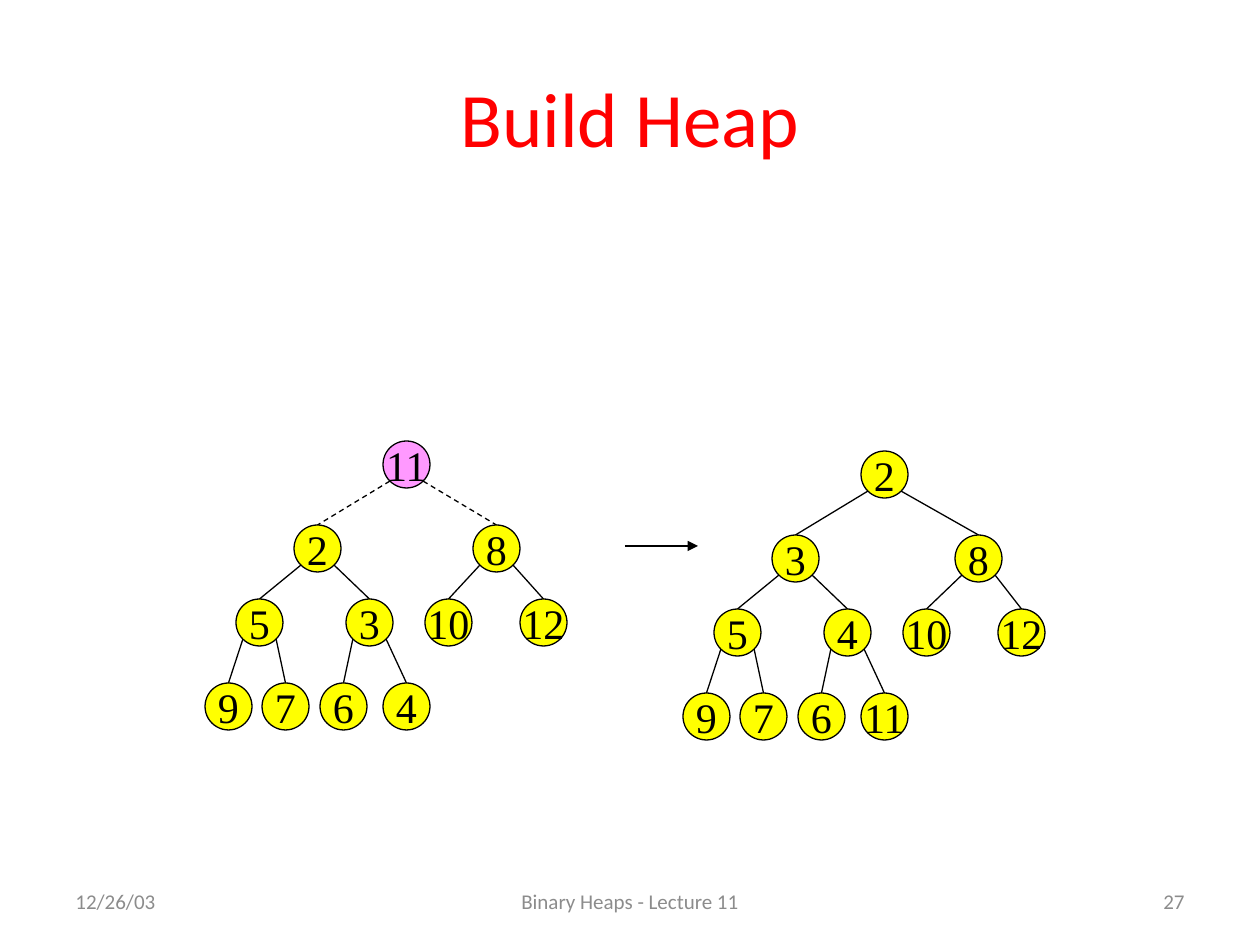
from math import sqrt

from pptx import Presentation
from pptx import util as u
from pptx.dml.color import RGBColor
from pptx.enum import dml, shapes, text
from pptx.oxml import parse_xml
from pptx.oxml.ns import nsdecls

PX = 914400 / 126
NODE = 47


def px(length):
    return u.Emu(round(length * PX))


def colour(value):
    return RGBColor.from_string(value)


class HeapSlide:
    """Style and current slide, with one method for each kind of element."""

    LABEL = dict(size=24, face="Times New Roman", ink="000000")
    FOOTER = dict(size=12, face="Calibri", ink="8C8C8C")
    TITLE = dict(size=44, face="Calibri", ink="FF0000")
    LINE = "000000"

    def __init__(self, deck):
        self.slide = deck.slides.add_slide(deck.slide_layouts[5])

    def label(self, frame, words, style, align, wrap=True):
        frame.text = words
        settings = dict(word_wrap=wrap, vertical_anchor=text.MSO_ANCHOR.MIDDLE,
                        auto_size=text.MSO_AUTO_SIZE.NONE)
        for name, value in settings.items():
            setattr(frame, name, value)
        line = frame.paragraphs[0]
        line.alignment = align
        font = line.runs[0].font
        for name, value in dict(size=u.Pt(style["size"]), name=style["face"]).items():
            setattr(font, name, value)
        font.color.rgb = colour(style["ink"])

    def title(self, words, left, top, width, height):
        heading = self.slide.shapes.title
        place = dict(left=left, top=top, width=width, height=height)
        for name, value in place.items():
            setattr(heading, name, px(value))
        self.label(heading.text_frame, words, self.TITLE, text.PP_ALIGN.CENTER)

    def footer(self, words, left, width, align):
        note = self.slide.shapes.add_textbox(px(left), px(876), px(width), px(50))
        self.label(note.text_frame, words, self.FOOTER, align)

    def node(self, key, left, top, fill):
        circle = self.slide.shapes.add_shape(
            shapes.MSO_SHAPE.OVAL, px(left), px(top), px(NODE), px(NODE))
        circle.shadow.inherit = False
        circle.fill.solid()
        circle.fill.fore_color.rgb = colour(fill)
        circle.line.color.rgb = colour(self.LINE)
        circle.line.width = u.Pt(0.75)
        self.label(circle.text_frame, str(key), self.LABEL, text.PP_ALIGN.CENTER, False)

    def line(self, start, end, dashed=False, arrow=False):
        stroke = self.slide.shapes.add_connector(
            shapes.MSO_CONNECTOR.STRAIGHT, *map(px, (*start, *end)))
        stroke.line.color.rgb = colour(self.LINE)
        stroke.line.width = u.Pt(0.75)
        if dashed:
            stroke.line.dash_style = dml.MSO_LINE.DASH
        properties = stroke._element.spPr
        if arrow:
            properties.ln.append(
                parse_xml(f'<a:tailEnd {nsdecls("a")} type="triangle"/>'))
        properties.append(parse_xml(f'<a:effectLst {nsdecls("a")}/>'))

    def tree(self, keys, places, root_fill="FFFF00", dashed_root=False):
        radius = NODE / 2
        reach = radius / sqrt(2)
        for index, (left, top) in enumerate(places):
            if index:
                parent_left, parent_top = places[(index - 1) // 2]
                side = -reach if index % 2 else reach
                self.line((parent_left + radius + side, parent_top + radius + reach),
                          (left + radius, top), dashed=dashed_root and index < 3)
        for index, (key, place) in enumerate(zip(keys, places)):
            self.node(key, *place, "FFFF00" if index else root_fill)


def main():
    deck = Presentation()
    deck.slide_width, deck.slide_height = px(1260), px(945)
    page = HeapSlide(deck)
    page.title("Build Heap", 63, 38, 1134, 157)

    levels = {441: [383], 525: [294, 473], 599: [236, 346, 425, 520],
              683: [205, 262, 320, 383]}
    before = [(left, top) for top, lefts in levels.items() for left in lefts]
    after = [(left + 478, top + 10) for left, top in before]
    after[2] = (955, 535)
    page.tree([11, 2, 8, 5, 3, 10, 12, 9, 7, 6, 4], before, "FF99FF", True)
    page.tree([2, 3, 8, 5, 4, 10, 12, 9, 7, 6, 11], after)
    page.line((625, 546), (698, 546), arrow=True)

    page.footer("12/26/03", 63, 294, text.PP_ALIGN.LEFT)
    page.footer("Binary Heaps - Lecture 11", 430, 400, text.PP_ALIGN.CENTER)
    page.footer("27", 903, 294, text.PP_ALIGN.RIGHT)
    deck.save("out.pptx")


if __name__ == "__main__":
    main()
